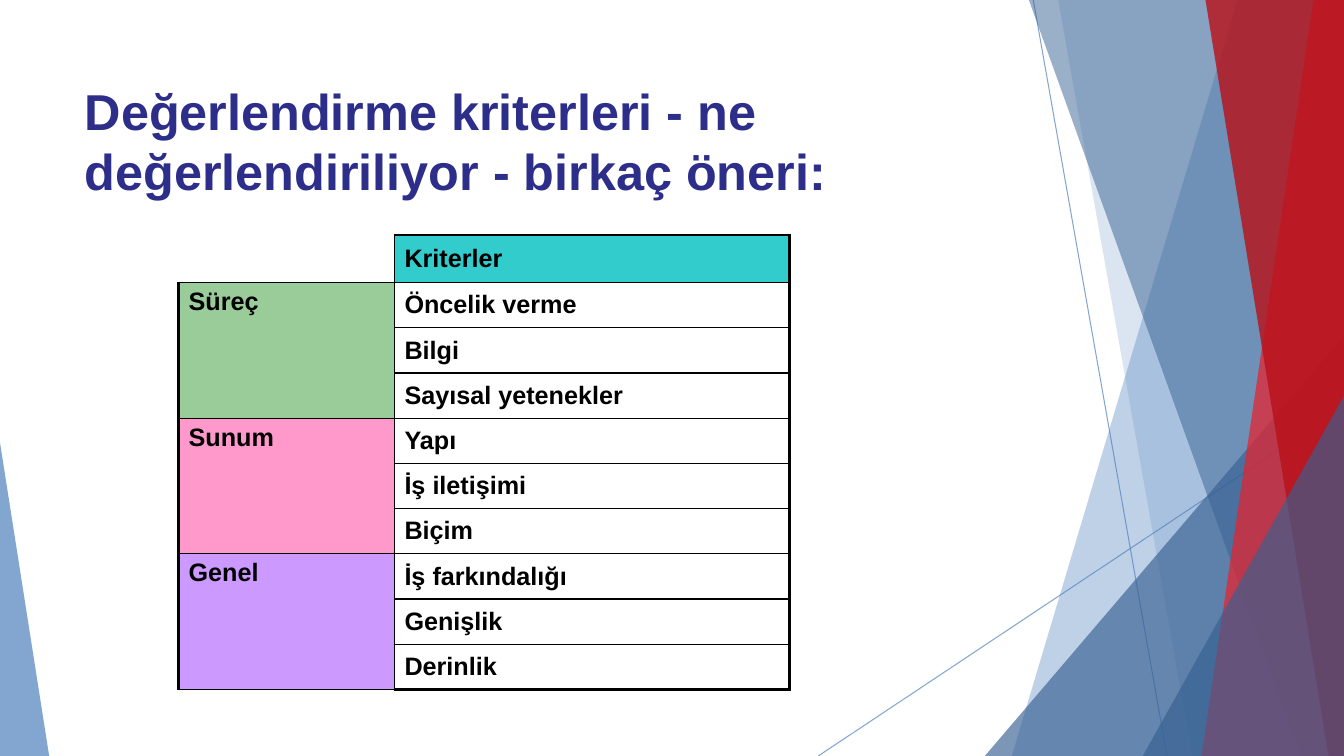
from dataclasses import dataclass

from lxml.etree import SubElement
from pptx import Presentation
from pptx.dml.color import RGBColor
from pptx.enum.shapes import MSO_CONNECTOR, MSO_SHAPE
from pptx.enum.text import MSO_ANCHOR, PP_ALIGN
from pptx.oxml.ns import qn
from pptx.util import Cm, Pt


@dataclass(frozen=True)
class Theme:
    font: str = "Arial"
    title_size: int = 36
    table_size: int = 18
    title: str = "2D2D8A"
    ink: str = "000000"
    header: str = "33CCCC"
    blue: str = "4F81BD"
    navy: str = "376092"
    red: str = "EC1F29"
    dark_red: str = "B91018"
    thin: float = 1
    thick: float = 2.25


THEME = Theme()
WIDTH, HEIGHT = 33.87, 19.05

TITLE = "Değerlendirme kriterleri - ne değerlendiriliyor - birkaç öneri:"
HEADER = "Kriterler"
GROUPS = [
    ("Süreç", "99CC99", ["Öncelik verme", "Bilgi", "Sayısal yetenekler"]),
    ("Sunum", "FF99CC", ["Yapı", "İş iletişimi", "Biçim"]),
    ("Genel", "CC99FF", ["İş farkındalığı", "Genişlik", "Derinlik"]),
]

TABLE_LEFT, TABLE_TOP = 4.5, 5.92
COLUMN_WIDTHS = [5.44, 9.96]
HEADER_HEIGHT, ROW_HEIGHT = 1.2, 1.14

RAYS = [(26.04, 0, 29.41, HEIGHT), (WIDTH, 10.24, 20.62, HEIGHT)]
# (kind, geometry, colour, opacity)
DECOR = [
    ("band", (31.19, 25.5), THEME.blue, 36),
    ("band", (26.67, 30.05), THEME.blue, 20),
    ("triangle", (24.82, WIDTH, 8.46, 1), THEME.navy, 66),
    ("band", (25.93, 32.79), THEME.navy, 50),
    ("band", (33.1, 30.28), THEME.red, 70),
    ("band", (30.38, 33.48), THEME.dark_red, 80),
    ("triangle", (28.8, WIDTH, 9.98, 1), THEME.navy, 66),
    ("triangle", (0, 1.24, 11.15, 0), THEME.blue, 70),
]


def rgb(value):
    return RGBColor.from_string(value)


def set_opacity(properties, percent):
    for colour in properties.iter(qn("a:srgbClr")):
        SubElement(colour, qn("a:alpha"), val=str(percent * 1000))


def add_ray(slide, ray):
    line = slide.shapes.add_connector(MSO_CONNECTOR.STRAIGHT, *map(Cm, ray))
    line.line.color.rgb = rgb(THEME.blue)
    line.line.width = Pt(0.75)
    set_opacity(line._element.spPr, 70)
    SubElement(line._element.spPr, qn("a:effectLst"))


def add_band(slide, top_x, bottom_x):
    builder = slide.shapes.build_freeform(Cm(top_x), 0)
    corners = [(WIDTH, 0), (WIDTH, HEIGHT), (bottom_x, HEIGHT)]
    builder.add_line_segments([(Cm(x), Cm(y)) for x, y in corners])
    return builder.convert_to_shape()


def add_triangle(slide, left, right, top, apex):
    shape = slide.shapes.add_shape(
        MSO_SHAPE.ISOSCELES_TRIANGLE,
        Cm(left), Cm(top), Cm(right - left), Cm(HEIGHT - top))
    shape.adjustments[0] = apex
    return shape


def add_decor(slide):
    builders = {"band": add_band, "triangle": add_triangle}
    for ray in RAYS:
        add_ray(slide, ray)
    for kind, geometry, colour, opacity in DECOR:
        shape = builders[kind](slide, *geometry)
        shape.shadow.inherit = False
        shape.line.fill.background()
        shape.fill.solid()
        shape.fill.fore_color.rgb = rgb(colour)
        set_opacity(shape._element.spPr, opacity)


def format_text(text_frame, size, colour):
    for paragraph in text_frame.paragraphs:
        paragraph.alignment = PP_ALIGN.LEFT
        for run in paragraph.runs:
            run.font.name = THEME.font
            run.font.size = Pt(size)
            run.font.bold = True
            run.font.color.rgb = rgb(colour)


def add_title(slide):
    title = slide.shapes.title
    title.left, title.top, title.width, title.height = map(Cm, (1.88, 1.7, 23.88, 3.66))
    title.text_frame.text = TITLE
    title.text_frame.word_wrap = True
    title.text_frame.vertical_anchor = MSO_ANCHOR.MIDDLE
    format_text(title.text_frame, THEME.title_size, THEME.title)


def set_borders(cell, widths):
    properties = cell._tc.get_or_add_tcPr()
    for side in "LRTB":
        width = widths.get(side, 0)
        line = SubElement(properties, qn(f"a:ln{side}"), w=str(Pt(width)))
        if width:
            fill = SubElement(line, qn("a:solidFill"))
            SubElement(fill, qn("a:srgbClr"), val=THEME.ink)
        else:
            SubElement(line, qn("a:noFill"))


def fill_cell(cell, text, colour, anchor):
    cell.text_frame.text = text
    cell.vertical_anchor = anchor
    format_text(cell.text_frame, THEME.table_size, THEME.ink)
    cell.fill.solid()
    cell.fill.fore_color.rgb = rgb(colour)


def add_criteria_table(slide):
    row_heights = [HEADER_HEIGHT] + [ROW_HEIGHT] * sum(len(names) for _, _, names in GROUPS)
    last_row = len(row_heights) - 1
    frame = slide.shapes.add_table(
        len(row_heights), 2, Cm(TABLE_LEFT), Cm(TABLE_TOP),
        Cm(sum(COLUMN_WIDTHS)), Cm(sum(row_heights)))
    table = frame.table
    table.first_row = table.horz_banding = False
    for column, width in zip(table.columns, COLUMN_WIDTHS):
        column.width = Cm(width)
    for index, height in enumerate(row_heights):
        table.rows[index].height = Cm(height)
        bottom = THEME.thick if index == last_row else THEME.thin
        label_sides = {"R": THEME.thin, "B": bottom}
        if index:
            label_sides |= {"L": THEME.thick, "T": THEME.thin}
        set_borders(table.cell(index, 0), label_sides)
        set_borders(table.cell(index, 1), {
            "L": THEME.thin, "R": THEME.thick, "T": THEME.thin, "B": bottom})
        for column in range(2):
            table.cell(index, column).fill.background()

    fill_cell(table.cell(0, 1), HEADER, THEME.header, MSO_ANCHOR.MIDDLE)
    row = 1
    for label, colour, names in GROUPS:
        group = table.cell(row, 0)
        group.merge(table.cell(row + len(names) - 1, 0))
        fill_cell(group, label, colour, MSO_ANCHOR.TOP)
        for name in names:
            cell = table.cell(row, 1)
            cell.text_frame.text = name
            cell.vertical_anchor = MSO_ANCHOR.MIDDLE
            format_text(cell.text_frame, THEME.table_size, THEME.ink)
            row += 1


def main():
    presentation = Presentation()
    presentation.slide_width, presentation.slide_height = Cm(WIDTH), Cm(HEIGHT)
    slide = presentation.slides.add_slide(presentation.slide_layouts[5])
    add_decor(slide)
    add_title(slide)
    add_criteria_table(slide)
    presentation.save("out.pptx")


if __name__ == "__main__":
    main()
